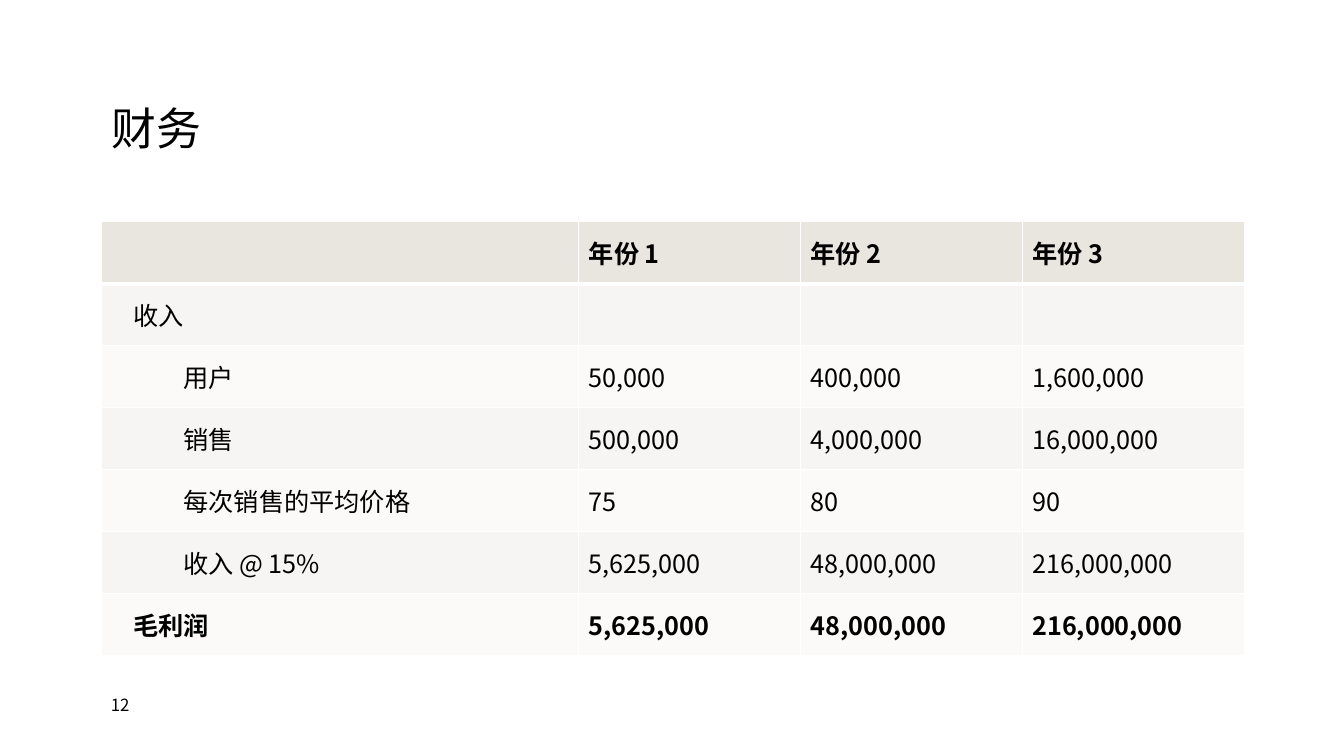
from lxml.etree import SubElement
from pptx import Presentation
from pptx.dml.color import RGBColor
from pptx.enum.text import MSO_ANCHOR as Anchor, MSO_AUTO_SIZE as AutoSize, PP_ALIGN as Align
from pptx.oxml.ns import qn
from pptx.util import Inches, Pt

FONT = "Noto Sans CJK SC"
COLORS = {"text": "000000", "header": "E9E6DF", "odd": "F7F5F3",
          "even": "FBFAF9", "border": "FFFFFF"}

# Layout in inches
LEFT, WIDTH = 1.01, 11.33
TABLE_TOP, ROW_HEIGHT = 2.2, 4.3 / 7
COLUMNS = [4.73, 2.2, 2.2, 2.2]
LABEL_INSET, LEVEL_INDENT = 0.31, 0.5

# Each row: label, indent level, bold, yearly values
ROWS = [
    ("", 0, True, ["年份 1", "年份 2", "年份 3"]),
    ("收入", 0, False, ["", "", ""]),
    ("用户", 1, False, ["50,000", "400,000", "1,600,000"]),
    ("销售", 1, False, ["500,000", "4,000,000", "16,000,000"]),
    ("每次销售的平均价格", 1, False, ["75", "80", "90"]),
    ("收入 @ 15%", 1, False, ["5,625,000", "48,000,000", "216,000,000"]),
    ("毛利润", 0, True, ["5,625,000", "48,000,000", "216,000,000"]),
]


def color(name):
    return RGBColor.from_string(COLORS[name])


def add_text(para, text, size, bold=False):
    span = para.add_run()
    span.text = text
    font = span.font
    font.size, font.bold, font.name = Pt(size), bold, FONT
    font.color.rgb = color("text")
    SubElement(font._element, qn("a:ea"), typeface=FONT)


def set_borders(cell, top, bottom):
    properties = cell._tc.get_or_add_tcPr()
    for side, width in (("L", 1), ("R", 1), ("T", top), ("B", bottom)):
        line = SubElement(properties, qn(f"a:ln{side}"), w=str(Pt(width)))
        fill = SubElement(line, qn("a:solidFill"))
        SubElement(fill, qn("a:srgbClr"), val=COLORS["border"])


def format_cell(cell, row, text, bold):
    set_borders(cell, top=3 if row == 1 else 1, bottom=3 if row == 0 else 1)
    cell.fill.solid()
    cell.fill.fore_color.rgb = color("header" if row == 0 else "odd" if row % 2 else "even")
    cell.vertical_anchor = Anchor.MIDDLE
    if text:
        add_text(cell.text_frame.paragraphs[0], text, 18, bold)


def add_title(page, text):
    title = page.shapes.title
    title.left, title.top, title.width, title.height = map(Inches, (LEFT, 0.64, 11.32, 1.32))
    frame = title.text_frame
    frame.auto_size, frame.vertical_anchor = AutoSize.NONE, Anchor.MIDDLE
    para = frame.paragraphs[0]
    para.alignment, para.line_spacing = Align.LEFT, 0.9
    add_text(para, text, 32)


def add_finance_table(page):
    frame = page.shapes.add_table(
        len(ROWS), len(COLUMNS), Inches(LEFT), Inches(TABLE_TOP),
        Inches(WIDTH), Inches(ROW_HEIGHT * len(ROWS)))
    table = frame.table
    for column, width in zip(table.columns, COLUMNS):
        column.width = Inches(width)
    for row, (label, level, bold, values) in enumerate(ROWS):
        table.rows[row].height = Inches(ROW_HEIGHT)
        for column, text in enumerate([label, *values]):
            format_cell(table.cell(row, column), row, text, bold)
        # Row labels are inset, and items are indented one level
        label_cell = table.cell(row, 0)
        if label:
            label_cell.margin_left = Inches(LABEL_INSET)
        if level:
            para = label_cell.text_frame.paragraphs[0]
            para.level = level
            para._p.get_or_add_pPr().set("marL", str(Inches(LEVEL_INDENT)))


def add_page_number(page, number):
    box = page.shapes.add_textbox(Inches(1), Inches(6.83), Inches(0.69), Inches(0.32))
    frame = box.text_frame
    frame.word_wrap, frame.vertical_anchor = True, Anchor.MIDDLE
    add_text(frame.paragraphs[0], number, 12)


def main():
    deck = Presentation()
    deck.slide_width, deck.slide_height = Inches(13.33), Inches(7.5)
    page = deck.slides.add_slide(deck.slide_layouts.get_by_name("Title Only"))
    add_title(page, "财务")
    add_finance_table(page)
    add_page_number(page, "12")
    deck.save("out.pptx")


if __name__ == "__main__":
    main()
